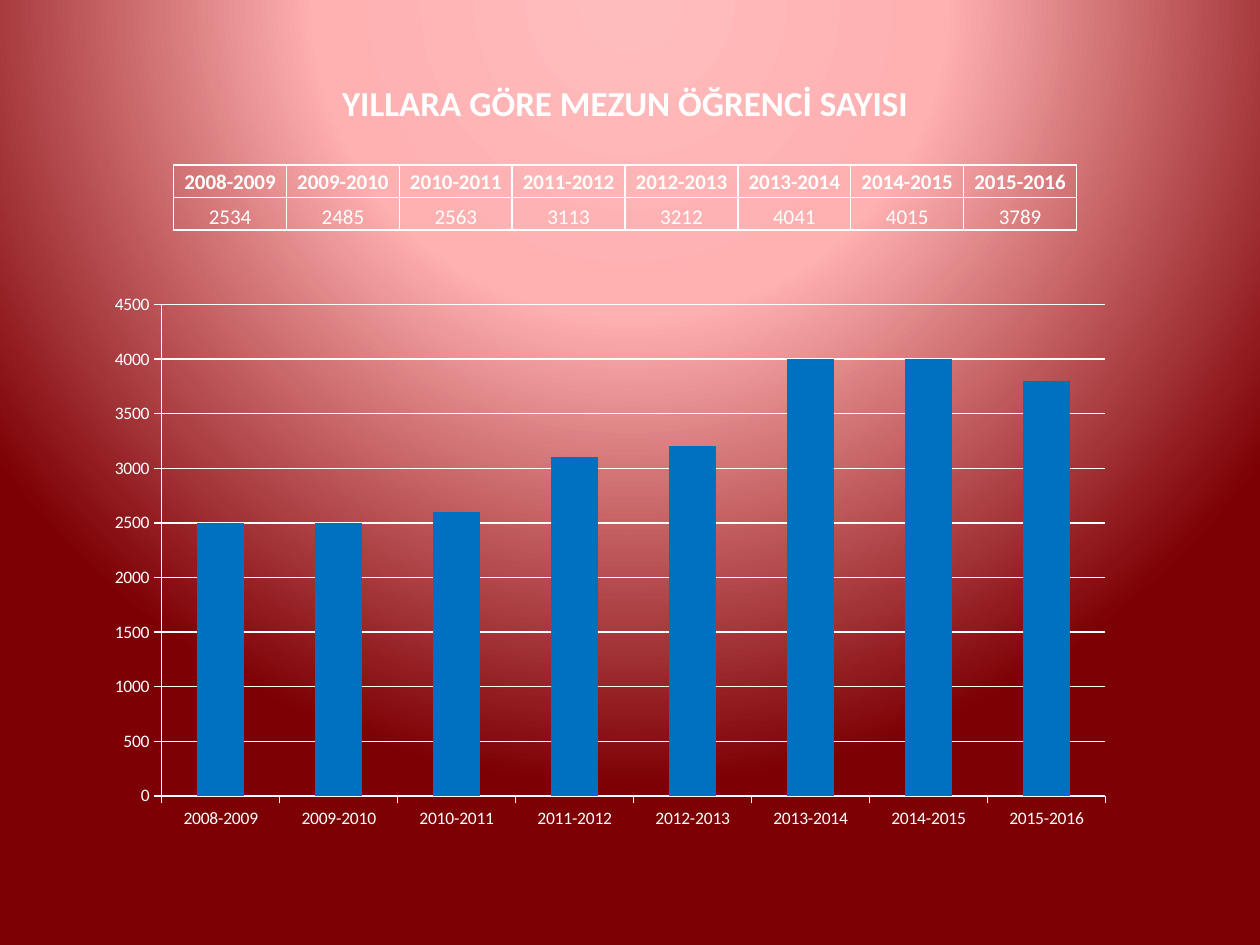
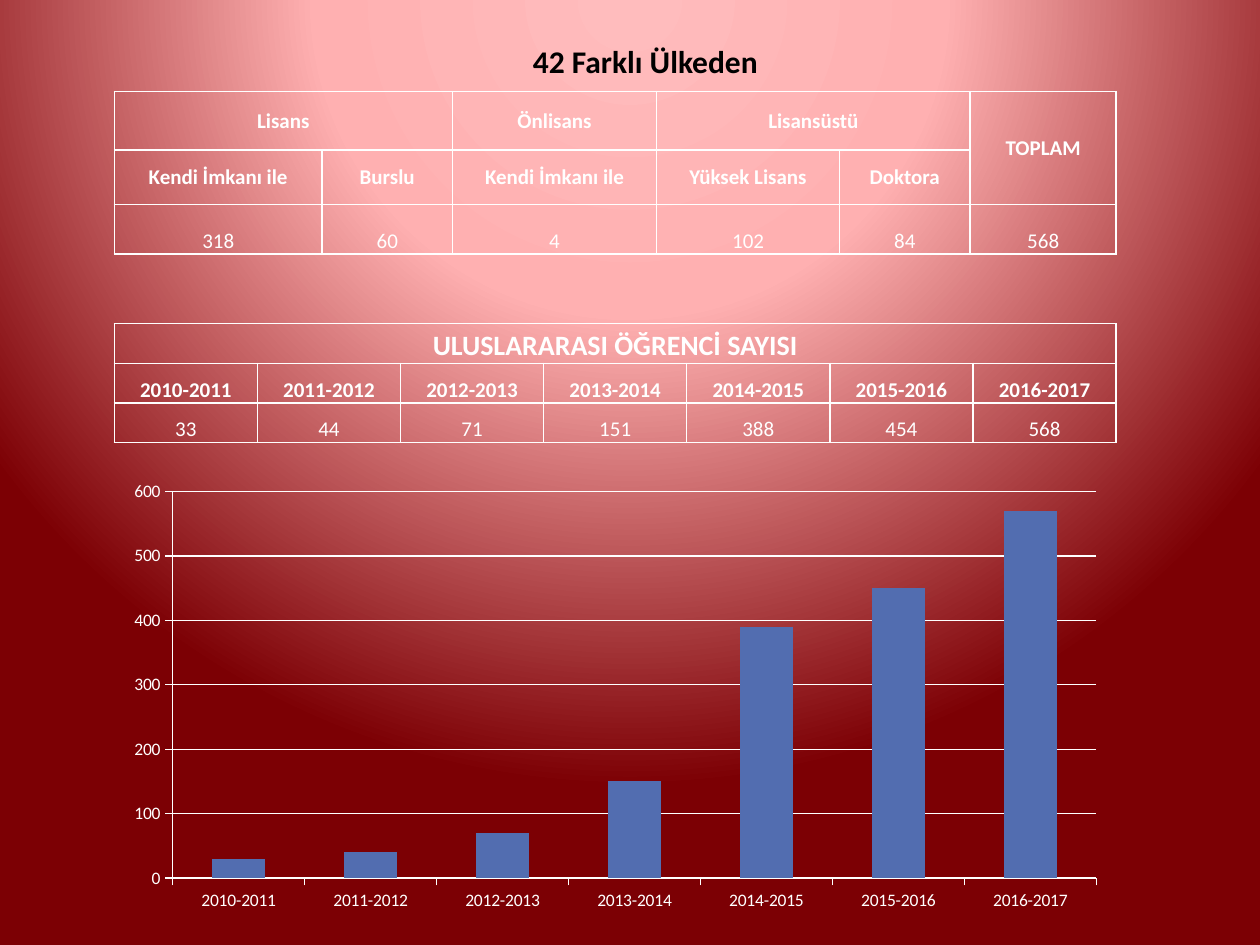
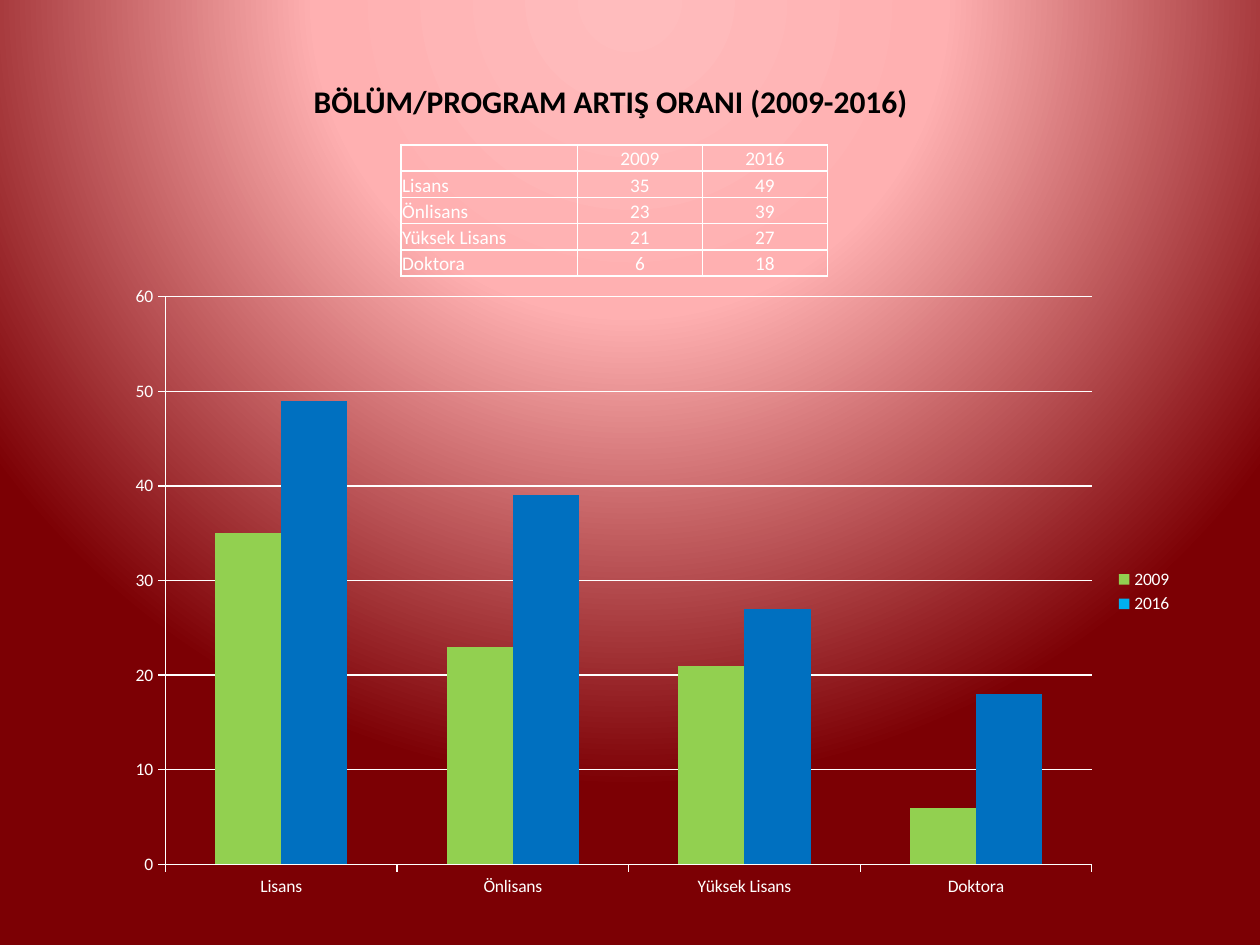
from dataclasses import dataclass

from lxml.etree import SubElement
from pptx import Presentation
from pptx.chart.data import CategoryChartData
from pptx.dml.color import RGBColor
from pptx.enum.chart import XL_CHART_TYPE, XL_LEGEND_POSITION, XL_TICK_MARK
from pptx.enum.text import MSO_ANCHOR, MSO_AUTO_SIZE, PP_ALIGN
from pptx.oxml import parse_xml
from pptx.oxml.ns import nsdecls, qn
from pptx.util import Pt


@dataclass(frozen=True)
class Theme:
    font: str = "Calibri"
    white: str = "FFFFFF"
    black: str = "000000"
    blue: str = "0070C0"
    light_blue: str = "00B0F0"
    slate: str = "526DB0"
    green: str = "92D050"
    glow: tuple = ((0, "FFBCBD"), (40, "FFB0B1"), (100, "7C0004"))
    title_size: int = 20
    subtitle_size: int = 18
    band_size: int = 16
    cell_size: int = 12
    small_size: int = 11
    chart_size: int = 10
    border_width: float = 1
    grid_width: float = 0.75


@dataclass(frozen=True)
class RowStyle:
    size: int
    bold: bool = False
    anchor: MSO_ANCHOR = MSO_ANCHOR.BOTTOM


THEME = Theme()
HEADER = RowStyle(THEME.cell_size, True, MSO_ANCHOR.MIDDLE)
LOW_HEADER = RowStyle(THEME.cell_size, True)
BAND = RowStyle(THEME.band_size, True)
VALUES = RowStyle(THEME.cell_size)
SMALL = RowStyle(THEME.small_size)


def set_all(target, values):
    for name, value in values.items():
        setattr(target, name, value)


class Deck:
    def __init__(self, theme):
        self.theme = theme
        self.presentation = Presentation()
        set_all(self.presentation, {"slide_width": Pt(720), "slide_height": Pt(540)})
        self.slide = None
        self.paint_background()

    def paint_background(self):
        """Give the master a round glow centred above the top edge."""
        master = self.presentation.slide_master
        master.background.fill.gradient()
        stops = "".join(
            f'<a:gs pos="{position * 1000}"><a:srgbClr val="{color}"/></a:gs>'
            for position, color in self.theme.glow
        )
        glow = parse_xml(
            f'<a:gradFill {nsdecls("a")} rotWithShape="1"><a:gsLst>{stops}</a:gsLst>'
            '<a:path path="circle">'
            '<a:fillToRect l="50000" t="-80000" r="50000" b="180000"/>'
            "</a:path></a:gradFill>"
        )
        properties = next(master.element.iter(qn("p:bgPr")))
        properties.replace(properties.find(qn("a:gradFill")), glow)

    def add_slide(self):
        self.slide = self.presentation.slides.add_slide(self.presentation.slide_layouts[6])

    def style_font(self, font, size, color, bold=False):
        set_all(font, {"name": self.theme.font, "size": Pt(size), "bold": bold})
        font.color.rgb = RGBColor.from_string(color)

    def style_line(self, line, width):
        line.color.rgb = RGBColor.from_string(self.theme.white)
        line.width = Pt(width)

    def title(self, text, box, size, color, wrap=False, align=PP_ALIGN.LEFT):
        frame = self.slide.shapes.add_textbox(*map(Pt, box)).text_frame
        set_all(frame, {"word_wrap": wrap, "auto_size": MSO_AUTO_SIZE.SHAPE_TO_FIT_TEXT})
        paragraph = frame.paragraphs[0]
        paragraph.alignment = align
        run = paragraph.add_run()
        run.text = text
        self.style_font(run.font, size, color, bold=True)

    def border_cell(self, cell):
        properties = cell._tc.get_or_add_tcPr()
        for index, side in enumerate(("lnL", "lnR", "lnT", "lnB")):
            border = parse_xml(
                f'<a:{side} {nsdecls("a")} w="{Pt(self.theme.border_width)}"><a:solidFill>'
                f'<a:srgbClr val="{self.theme.white}"/></a:solidFill></a:{side}>'
            )
            properties.insert(index, border)

    def fill_cell(self, cell, text, style, align):
        set_all(cell, {
            "margin_left": Pt(0.75), "margin_right": Pt(0.75),
            "margin_top": Pt(0.75), "margin_bottom": Pt(0),
            "vertical_anchor": style.anchor,
        })
        cell.fill.background()
        self.border_cell(cell)
        paragraph = cell.text_frame.paragraphs[0]
        paragraph.alignment = align
        if text:
            run = paragraph.add_run()
            run.text = text
            self.style_font(run.font, style.size, self.theme.white, style.bold)
        else:
            SubElement(paragraph._p, qn("a:endParaRPr"), sz=str(style.size * 100))

    def table(self, left, top, widths, heights, rows, merges=(), row_labels=False):
        """Draw rows given as (style, texts); merges are pairs of corner cells."""
        box = (left, top, sum(widths), sum(heights))
        table = self.slide.shapes.add_table(len(heights), len(widths), *map(Pt, box)).table
        set_all(table, {"first_row": False, "horz_banding": False})
        for column, width in zip(table.columns, widths):
            column.width = Pt(width)
        for row, height in zip(table.rows, heights):
            row.height = Pt(height)
        for row, (style, texts) in zip(table.rows, rows):
            for index, (cell, text) in enumerate(zip(row.cells, texts)):
                is_label = row_labels and index == 0
                align = PP_ALIGN.LEFT if is_label else PP_ALIGN.CENTER
                self.fill_cell(cell, str(text), style, align)
        for first, last in merges:
            table.cell(*first).merge(table.cell(*last))

    def column_chart(self, box, categories, series, legend=False):
        """Draw columns; series are (name, values, series colour, bar colour)."""
        data = CategoryChartData()
        data.categories = categories
        for name, values, *_ in series:
            data.add_series(name, values)
        chart = self.slide.shapes.add_chart(
            XL_CHART_TYPE.COLUMN_CLUSTERED, *map(Pt, box), data
        ).chart
        set_all(chart, {"has_title": False, "has_legend": legend})
        self.style_font(chart.font, self.theme.chart_size, self.theme.white)
        if legend:
            set_all(chart.legend, {
                "position": XL_LEGEND_POSITION.RIGHT, "include_in_layout": False,
            })
        for axis in (chart.category_axis, chart.value_axis):
            axis.major_tick_mark = XL_TICK_MARK.OUTSIDE
            self.style_line(axis.format.line, self.theme.grid_width)
        self.style_line(chart.value_axis.major_gridlines.format.line, self.theme.grid_width)
        plot = chart.plots[0]
        set_all(plot, {"gap_width": 150, "overlap": 0, "vary_by_categories": False})
        for columns, (_, values, color, bar_color) in zip(plot.series, series):
            self.paint(columns, color)
            if bar_color != color:
                for index in range(len(values)):
                    self.paint(columns.points[index], bar_color)

    def paint(self, item, color):
        item.format.fill.solid()
        item.format.fill.fore_color.rgb = RGBColor.from_string(color)


def school_years(first, last):
    return [f"{year}-{year + 1}" for year in range(first, last + 1)]


def rounded(values, digits):
    return [round(value, digits) for value in values]


def add_graduates(deck):
    years = school_years(2008, 2015)
    graduates = [2534, 2485, 2563, 3113, 3212, 4041, 4015, 3789]
    deck.add_slide()
    deck.title("YILLARA GÖRE MEZUN ÖĞRENCİ SAYISI", (167.3, 43.2, 380, 31.5),
               THEME.title_size, THEME.white, wrap=True, align=PP_ALIGN.CENTER)
    deck.table(99.2, 94.2, [64.5] * len(years), [18.7] * 2,
               [(HEADER, years), (VALUES, graduates)])
    deck.column_chart((53.8, 162, 589.7, 317.6), years,
                      [("Series 1", rounded(graduates, -2), THEME.blue, THEME.blue)])


def add_international_students(deck):
    years = school_years(2010, 2016)
    students = [33, 44, 71, 151, 388, 454, 568]
    left, width = 65.3, 572.6
    deck.add_slide()
    deck.table(
        left, 52.4, [118.8, 74.4, 116.8, 104.4, 74.7, 83.5], [33.2, 31.2, 28.3],
        [
            (HEADER, ["Lisans", "", "Önlisans", "Lisansüstü", "", "TOPLAM"]),
            (HEADER, ["Kendi İmkanı ile", "Burslu", "Kendi İmkanı ile",
                      "Yüksek Lisans", "Doktora", ""]),
            (VALUES, [318, 60, 4, 102, 84, 568]),
        ],
        merges=[((0, 0), (0, 1)), ((0, 3), (0, 4)), ((0, 5), (1, 5))],
    )
    deck.title("42 Farklı Ülkeden", (297.4, 20.6, 148.3, 29),
               THEME.subtitle_size, THEME.black)
    deck.column_chart((left, 270.2, width, 255), years,
                      [("Series 1", rounded(students, -1), THEME.slate, THEME.slate)])
    band = ["ULUSLARARASI ÖĞRENCİ SAYISI"] + [""] * (len(years) - 1)
    deck.table(left, 184.9, [width / len(years)] * len(years), [22.7] * 3,
               [(BAND, band), (LOW_HEADER, years), (VALUES, students)],
               merges=[((0, 0), (0, len(years) - 1))])


def add_programme_growth(deck):
    levels = ["Lisans", "Önlisans", "Yüksek Lisans", "Doktora"]
    before, after = [35, 23, 21, 6], [49, 39, 27, 18]
    rows = [("", "2009", "2016"), *zip(levels, before, after)]
    deck.add_slide()
    deck.title("BÖLÜM/PROGRAM ARTIŞ ORANI (2009-2016)", (172.2, 43.2, 357, 29),
               THEME.subtitle_size, THEME.black)
    deck.table(229, 82.8, [100.9, 71.5, 71.5], [15] * len(rows),
               [(SMALL, row) for row in rows], row_labels=True)
    deck.column_chart(
        (65.3, 156.6, 612, 363), levels,
        [("2009", before, THEME.green, THEME.green),
         ("2016", after, THEME.light_blue, THEME.blue)],
        legend=True,
    )


def main():
    deck = Deck(THEME)
    add_graduates(deck)
    add_international_students(deck)
    add_programme_growth(deck)
    deck.presentation.save("out.pptx")


if __name__ == "__main__":
    main()
